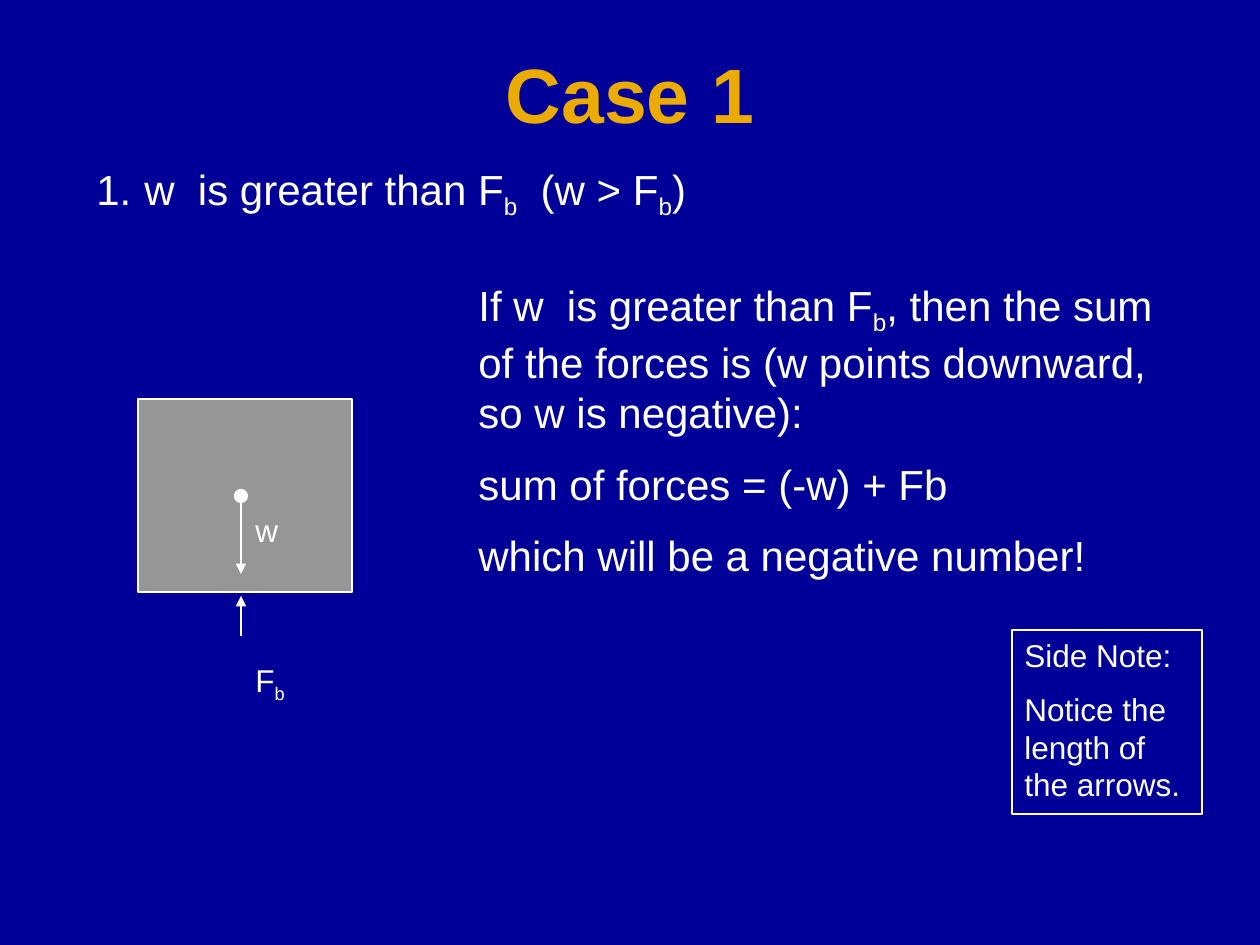
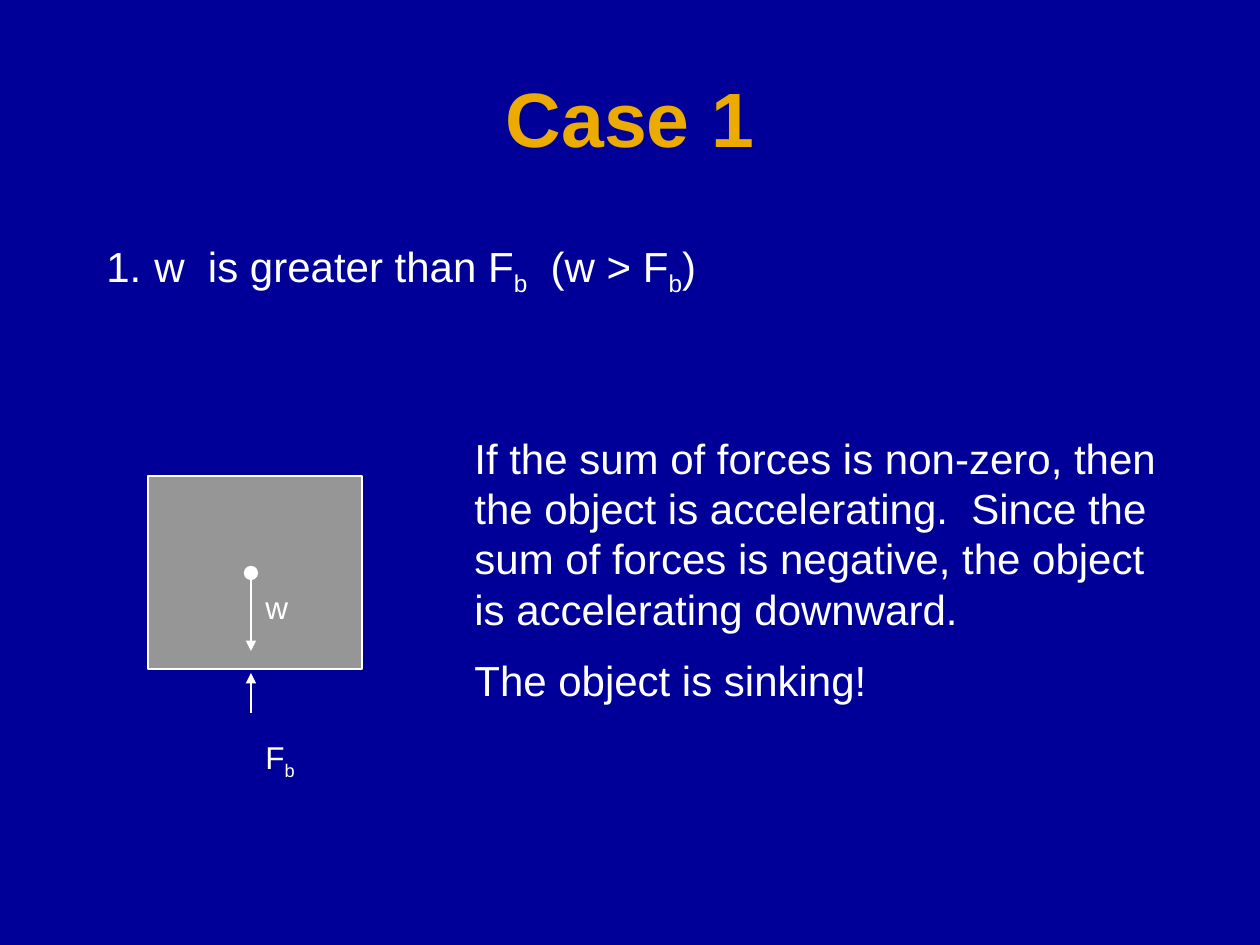
import pptx
import pptx.dml.color
import pptx.enum.shapes
import pptx.enum.text
import pptx.oxml.ns
import pptx.util
from lxml import etree

# Content: "_" lowers the next letter to a subscript
TITLE = "Case 1"
CASE = "w  is greater than F_b  (w > F_b)"
SLIDES = [
    {
        "title_height": 109,
        "case_at": (84, 157),
        "body_at": (466, 273, 723, 315),
        "body": [
            "If w  is greater than F_b, then the sum of the forces is "
            "(w points downward, so w is negative):",
            "sum of forces = (-w) + Fb",
            "which will be a negative number!",
        ],
        "note": ["Side Note:", "Notice the length of the arrows."],
    },
    {
        "title_height": 157,
        "case_at": (94, 234),
        "body_at": (462, 426, 723, 290),
        "body": [
            "If the sum of forces is non-zero, then the object is accelerating.  "
            "Since the sum of forces is negative, the object is accelerating downward.",
            "The object is sinking!",
        ],
    },
]

# Shared look
NAVY = pptx.dml.color.RGBColor(0x00, 0x00, 0x99)
GOLD = pptx.dml.color.RGBColor(0xEB, 0xAB, 0x00)
GRAY = pptx.dml.color.RGBColor(0x96, 0x96, 0x96)
WHITE = pptx.dml.color.RGBColor(0xFF, 0xFF, 0xFF)
FONT = "Arial"
TITLE_SIZE, BODY_SIZE, LABEL_SIZE = 44, 24, 18
LINE_WIDTH = pptx.util.Pt(0.75)
PX_PER_INCH = 126
NOTE_AT = (1012, 630, 190, 184)
CASE_SIZE = (1058, 63)
CASE_INDENT = 48

# Force diagram, measured from the block's top left corner
BLOCK_FROM_CASE = (54, 242)
BLOCK_SIZE = (214, 193)
AXIS = 103
CENTER = 97
DOT = 13
ARROWS = [(CENTER, 175), (237, 197)]
LABELS = [("w", 106), ("F_b", 256)]
LABEL_GAP = 2
LABEL_BOX = (66, 50)

SHAPES = pptx.enum.shapes.MSO_SHAPE


def px(*lengths):
    return [round(length * 914400 / PX_PER_INCH) for length in lengths]


def add_child(parent, tag, **attributes):
    return etree.SubElement(parent, pptx.oxml.ns.qn(tag), attributes)


def write(box, texts, size, color=WHITE, bold=False, align="LEFT", anchor="TOP", numbered=False):
    frame = box.text_frame
    frame.word_wrap = True
    frame.vertical_anchor = getattr(pptx.enum.text.MSO_ANCHOR, anchor)
    for index, text in enumerate(texts):
        para = frame.add_paragraph() if index else frame.paragraphs[0]
        para.alignment = getattr(pptx.enum.text.PP_ALIGN, align)
        if index:
            para.space_before = pptx.util.Pt(size / 2)
        if numbered:
            indent, = px(CASE_INDENT)
            properties = para._p.get_or_add_pPr()
            properties.set("marL", str(indent))
            properties.set("indent", str(-indent))
            add_child(properties, "a:buAutoNum", type="arabicPeriod")
        para.font.name = FONT
        para.font.size = pptx.util.Pt(size)
        para.font.bold = bold
        para.font.color.rgb = color
        first, *rest = text.split("_")
        para.add_run().text = first
        for piece in rest:
            span = para.add_run()
            span.text = piece[0]
            span._r.get_or_add_rPr().set("baseline", "-25000")
            if piece[1:]:
                para.add_run().text = piece[1:]


def add_text(page, at, texts, size, **style):
    write(page.shapes.add_textbox(*px(*at)), texts, size, **style)


def add_outlined(page, kind, at, fill=None):
    shape = page.shapes.add_shape(kind, *px(*at))
    shape.shadow.inherit = False
    if fill is None:
        shape.fill.background()
    else:
        shape.fill.solid()
        shape.fill.fore_color.rgb = fill
    shape.line.color.rgb = WHITE
    shape.line.width = LINE_WIDTH
    return shape


def add_arrow(page, x, start, end):
    arrow = page.shapes.add_connector(
        pptx.enum.shapes.MSO_CONNECTOR.STRAIGHT, *px(x, start, x, end))
    arrow.line.color.rgb = WHITE
    arrow.line.width = LINE_WIDTH
    add_child(arrow.line._get_or_add_ln(), "a:tailEnd", type="triangle")
    add_child(arrow._element.spPr, "a:effectLst")


def add_force_diagram(page, left, top):
    add_outlined(page, SHAPES.RECTANGLE, (left, top, *BLOCK_SIZE), GRAY)
    axis = left + AXIS
    for start, end in ARROWS:
        add_arrow(page, axis, top + start, top + end)
    dot_at = (axis - DOT / 2, top + CENTER - DOT / 2, DOT, DOT)
    add_outlined(page, SHAPES.OVAL, dot_at, WHITE)
    for label, offset in LABELS:
        add_text(page, (axis + LABEL_GAP, top + offset, *LABEL_BOX), [label], LABEL_SIZE)


def add_page(deck, content):
    page = deck.slides.add_slide(deck.slide_layouts[6])
    page.background.fill.solid()
    page.background.fill.fore_color.rgb = NAVY
    add_text(page, (63, 38, 1134, content["title_height"]), [TITLE], TITLE_SIZE,
             color=GOLD, bold=True, align="CENTER", anchor="MIDDLE")
    left, top = content["case_at"]
    add_text(page, (left, top, *CASE_SIZE), [CASE], BODY_SIZE, numbered=True)
    add_force_diagram(page, left + BLOCK_FROM_CASE[0], top + BLOCK_FROM_CASE[1])
    add_text(page, content["body_at"], content["body"], BODY_SIZE)
    if "note" in content:
        note = add_outlined(page, SHAPES.RECTANGLE, NOTE_AT)
        write(note, content["note"], LABEL_SIZE)


def main():
    deck = pptx.Presentation()
    deck.slide_width, deck.slide_height = px(1260, 945)
    for content in SLIDES:
        add_page(deck, content)
    deck.save("out.pptx")


if __name__ == "__main__":
    main()
